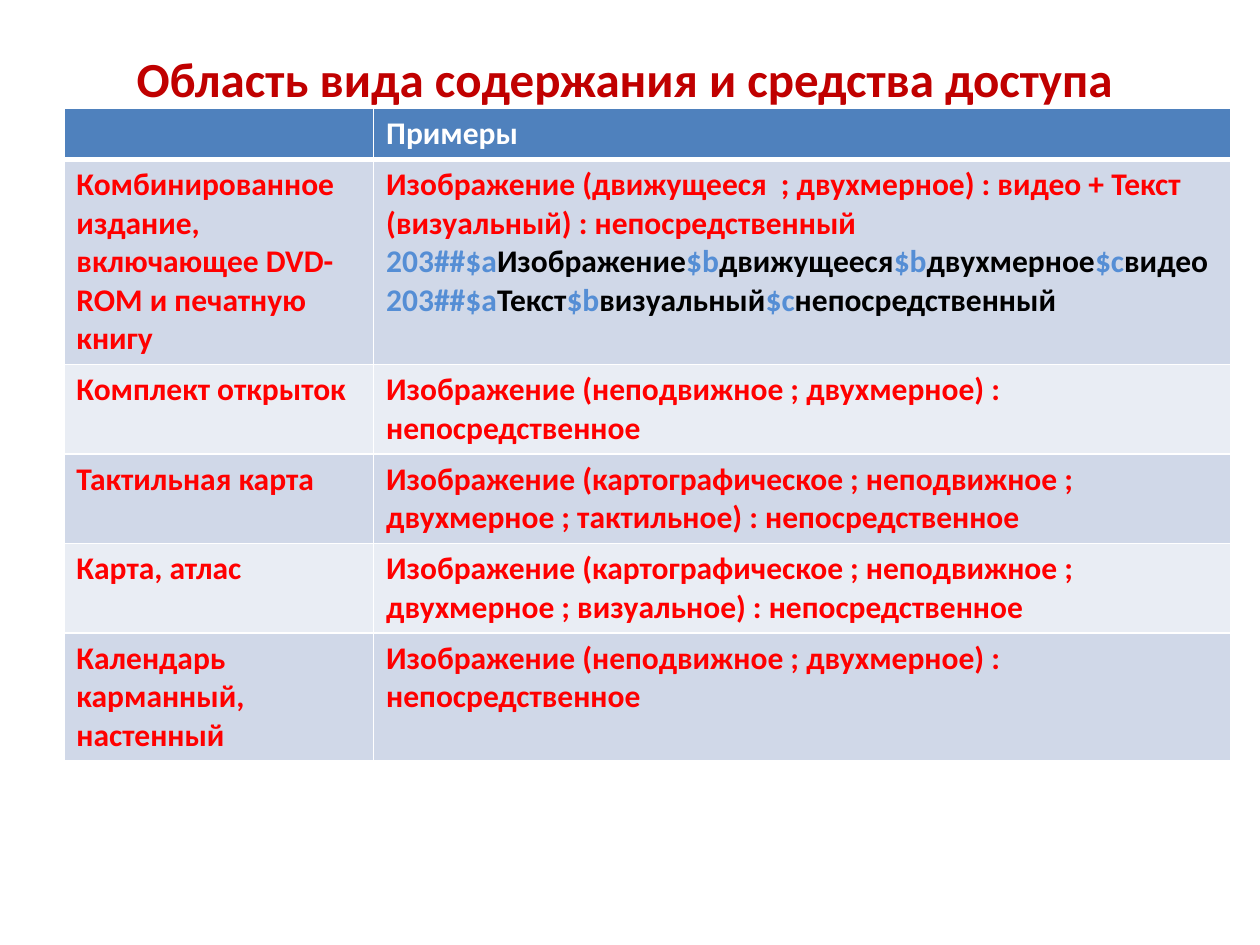
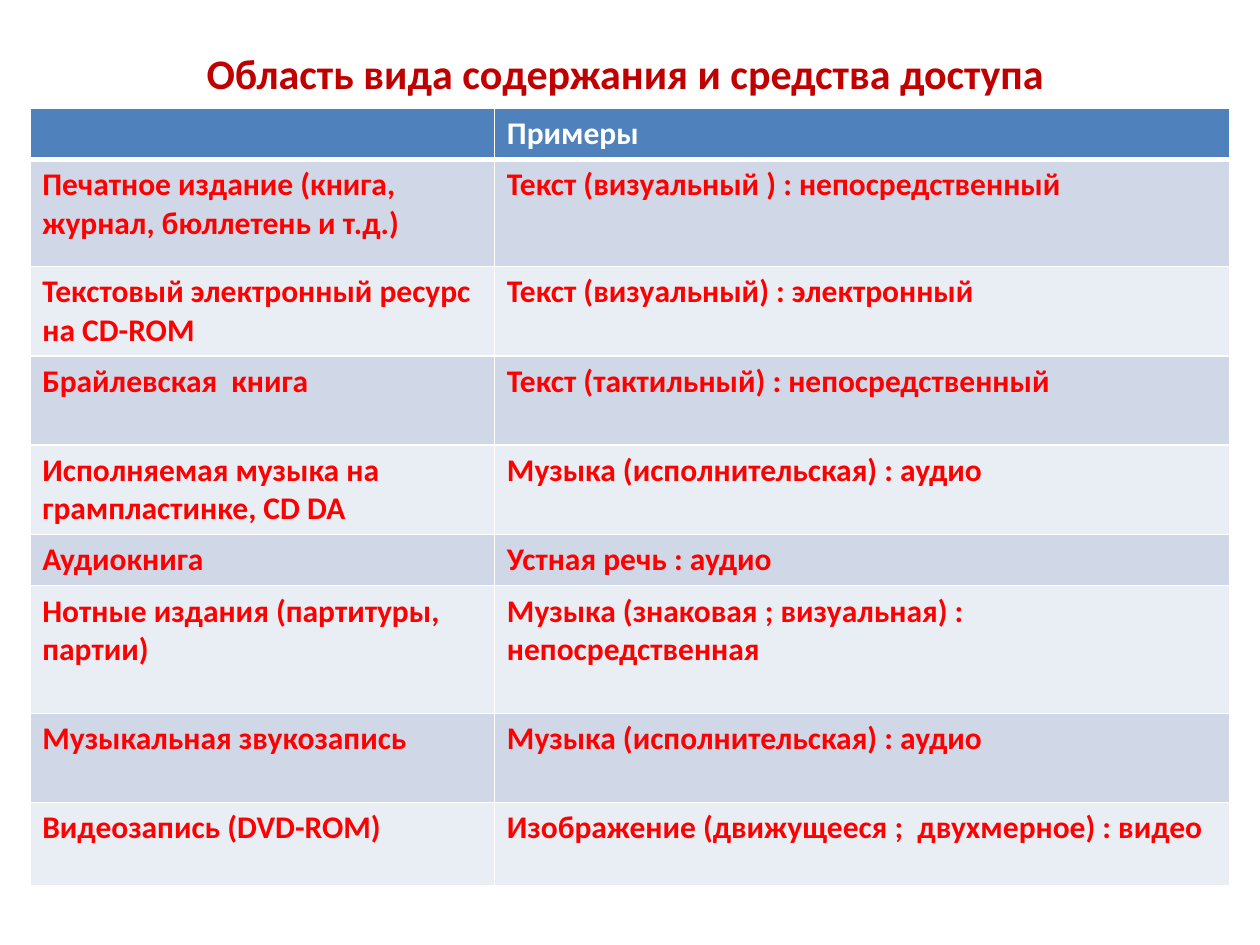
import pptx
import pptx.dml.color
import pptx.enum.text
import pptx.oxml
import pptx.oxml.ns
import pptx.util

Pt = pptx.util.Pt
RGBColor = pptx.dml.color.RGBColor

# Shared look
TITLE_RED = RGBColor(0xC0, 0x00, 0x00)
TEXT_RED = RGBColor(0xFF, 0x00, 0x00)
CODE_BLUE = RGBColor(0x55, 0x8E, 0xD5)
BLACK = RGBColor(0x00, 0x00, 0x00)
WHITE = RGBColor(0xFF, 0xFF, 0xFF)
HEADER_BLUE = RGBColor(0x4F, 0x81, 0xBD)
BANDS = (RGBColor(0xE9, 0xED, 0xF4), RGBColor(0xD0, 0xD8, 0xE8))
FONT = "Calibri"
TITLE = "Область вида содержания и средства доступа "
HEADER = ("", "Примеры")
TABLE_TOP = 62

# Each row: height, resource, example. A line break starts a paragraph;
# "|" separates field codes from their values.
SLIDES = [
    dict(
        title_box=(36, 21.6, 648, 46), title_size=28,
        table_left=36.5, columns=(177, 490),
        rows=[
            (117, "Комбинированное издание, включающее DVD-\nROM и печатную книгу",
             "Изображение (движущееся  ; двухмерное) : видео + Текст (визуальный) : непосредственный\n"
             "203##$a|Изображение|$b|движущееся|$b|двухмерное|$c|видео\n"
             "203##$a|Текст|$b|визуальный|$c|непосредственный"),
            (51, "Комплект открыток",
             "Изображение (неподвижное ; двухмерное) : непосредственное"),
            (51, "Тактильная карта",
             "Изображение (картографическое ; неподвижное ; двухмерное ; тактильное) : непосредственное"),
            (51, "Карта, атлас",
             "Изображение (картографическое ; неподвижное ; двухмерное ; визуальное) : непосредственное"),
            (73, "Календарь карманный, настенный",
             "Изображение (неподвижное ; двухмерное) : непосредственное"),
        ],
    ),
    dict(
        title_box=(36, 16.6, 648, 50.4), title_size=24,
        table_left=17, columns=(265.5, 420.5),
        rows=[
            (61, "Печатное издание (книга, журнал, бюллетень и т.д.)",
             "Текст (визуальный ) : непосредственный"),
            (51, "Текстовый электронный ресурс на CD-ROM", "Текст (визуальный) : электронный"),
            (51, "Брайлевская  книга", "Текст (тактильный) : непосредственный"),
            (51, "Исполняемая музыка на\nгрампластинке, CD DA", "Музыка (исполнительская) : аудио"),
            (29, "Аудиокнига", "Устная речь : аудио"),
            (73, "Нотные издания (партитуры, партии)",
             "Музыка (знаковая ; визуальная) : непосредственная"),
            (51, "Музыкальная звукозапись", "Музыка (исполнительская) : аудио"),
            (47.5, "Видеозапись (DVD-ROM)", "Изображение (движущееся ;  двухмерное) : видео"),
        ],
    ),
]


def write_text(text_frame, text, size=18, color=TEXT_RED, align=None):
    for index, line in enumerate(text.split("\n")):
        paragraph = text_frame.paragraphs[0] if index == 0 else text_frame.add_paragraph()
        paragraph.alignment = align
        paragraph.font.size = Pt(size)
        parts = line.split("|")
        colors = (CODE_BLUE, BLACK) if len(parts) > 1 else (color,)
        for position, part in enumerate(parts):
            if not part:
                continue
            run = paragraph.add_run()
            run.text = part
            run.font.name = FONT
            run.font.size = Pt(size)
            run.font.bold = True
            run.font.color.rgb = colors[position % len(colors)]


def format_cell(cell, fill, top=1, bottom=1):
    cell.fill.solid()
    cell.fill.fore_color.rgb = fill
    properties = cell._tc.get_or_add_tcPr()
    for index, (side, width) in enumerate(zip("LRTB", (1, 1, top, bottom))):
        properties.insert(index, pptx.oxml.parse_xml(
            f'<a:ln{side} {pptx.oxml.ns.nsdecls("a")} w="{Pt(width)}"><a:solidFill>'
            f'<a:srgbClr val="{WHITE}"/></a:solidFill></a:ln{side}>'))


presentation = pptx.Presentation()
presentation.slide_width = Pt(720)
presentation.slide_height = Pt(540)
title_only = presentation.slide_layouts[5]

for content in SLIDES:
    slide = presentation.slides.add_slide(title_only)

    # Table of resources and examples
    rows = [(29, *HEADER)] + content["rows"]
    columns = content["columns"]
    frame = slide.shapes.add_table(
        len(rows), len(columns), Pt(content["table_left"]), Pt(TABLE_TOP),
        Pt(sum(columns)), Pt(sum(row[0] for row in rows)))
    table = frame.table
    for column, width in zip(table.columns, columns):
        column.width = Pt(width)
    for row_index, (height, *texts) in enumerate(rows):
        table.rows[row_index].height = Pt(height)
        is_header = row_index == 0
        for column_index, text in enumerate(texts):
            cell = table.cell(row_index, column_index)
            write_text(cell.text_frame, text, color=WHITE if is_header else TEXT_RED)
            format_cell(cell, HEADER_BLUE if is_header else BANDS[row_index % 2],
                        top=3 if row_index == 1 else 1, bottom=3 if is_header else 1)

    # Title
    title = slide.shapes.title
    title.left, title.top, title.width, title.height = map(Pt, content["title_box"])
    title.text_frame.vertical_anchor = pptx.enum.text.MSO_ANCHOR.MIDDLE
    write_text(title.text_frame, TITLE, size=content["title_size"], color=TITLE_RED,
               align=pptx.enum.text.PP_ALIGN.CENTER)

presentation.save("out.pptx")
